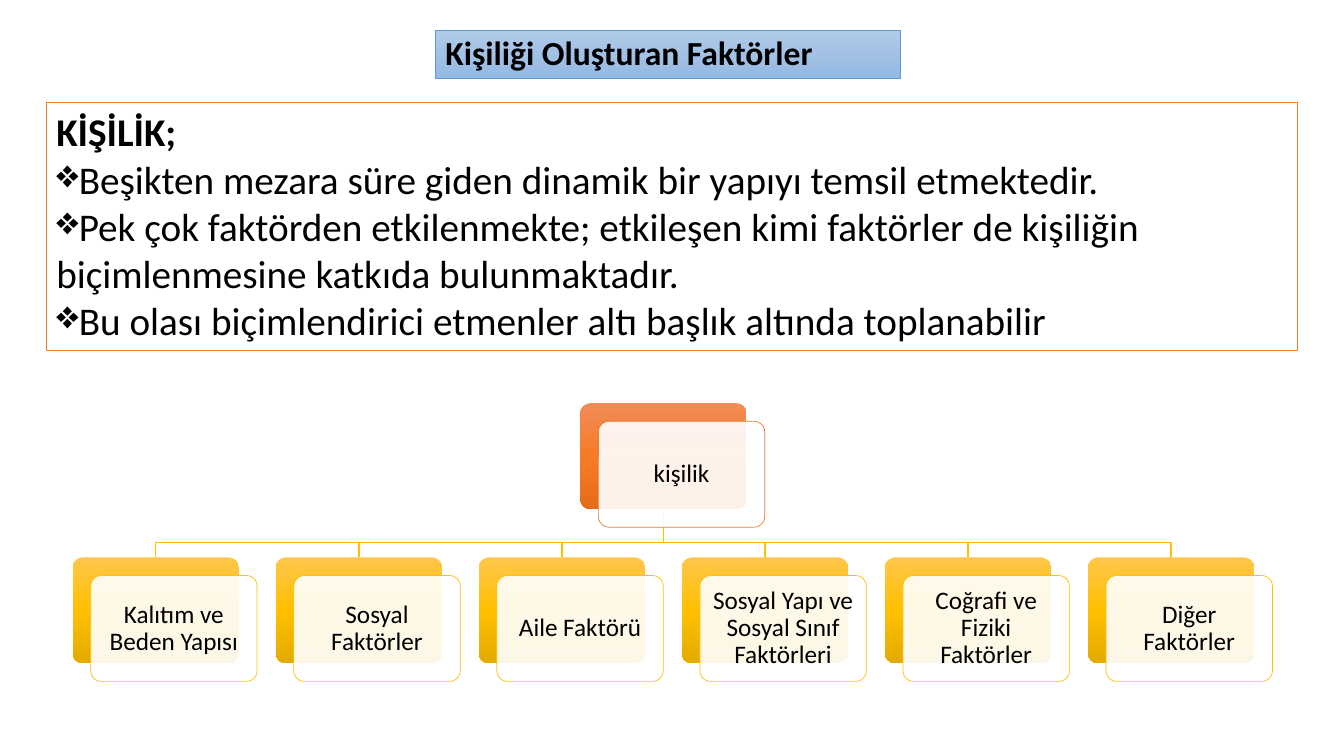
from copy import deepcopy

from lxml import etree
from pptx import Presentation
from pptx.dml.color import RGBColor
from pptx.enum.shapes import MSO_SHAPE
from pptx.enum.text import MSO_ANCHOR, PP_ALIGN
from pptx.oxml.ns import qn
from pptx.util import Inches, Pt

RECTANGLE, ROUNDED = MSO_SHAPE.RECTANGLE, MSO_SHAPE.ROUNDED_RECTANGLE
LEFT, CENTER = PP_ALIGN.LEFT, PP_ALIGN.CENTER
TOP, MIDDLE = MSO_ANCHOR.TOP, MSO_ANCHOR.MIDDLE

# Content
TITLE = "Kişiliği Oluşturan Faktörler"
HEADING = "KİŞİLİK;"
POINTS = [
    "Beşikten mezara süre giden dinamik bir yapıyı temsil etmektedir.",
    "Pek çok faktörden etkilenmekte; etkileşen kimi faktörler de kişiliğin "
    "biçimlenmesine katkıda bulunmaktadır.",
    "Bu olası biçimlendirici etmenler altı başlık altında toplanabilir",
]
ROOT = "kişilik"
FACTORS = [
    "Kalıtım ve Beden Yapısı",
    "Sosyal Faktörler",
    "Aile Faktörü",
    "Sosyal Yapı ve Sosyal Sınıf Faktörleri",
    "Coğrafi ve Fiziki Faktörler",
    "Diğer Faktörler",
]

# Style
FONT = "Calibri"
COLORS = {"text": "000000", "paper": "FFFFFF", "title": "5B9BD5",
          "root": "ED7D31", "factor": "FFC000"}
GRADIENTS = {"title": ("B1CBE9", "A3C1E5", "93B9E4"),
             "root": ("F18C57", "F67B28", "E56C19"),
             "factor": ("FFC64B", "FFC000", "E3AB00")}

# Tree layout, in inches
CARD_WIDTH, CARD_HEIGHT = 1.65, 1.05
CARD_SHIFT = 0.18
ROOT_TOP, FACTOR_TOP, BRANCH_Y = 4, 5.53, 5.38
FIRST_LEFT, LAST_LEFT = 0.72, 10.79
PITCH = (LAST_LEFT - FIRST_LEFT) / (len(FACTORS) - 1)
ROOT_LEFT = (FIRST_LEFT + LAST_LEFT) / 2

presentation = Presentation()
presentation.slide_width, presentation.slide_height = Inches(13.33), Inches(7.5)
slide = presentation.slides.add_slide(presentation.slide_layouts[6])


def color(name):
    return RGBColor.from_string(COLORS[name])


def add_box(kind, left, top, width, height, line=None, weight=0.5):
    shape = slide.shapes.add_shape(
        kind, Inches(left), Inches(top), Inches(width), Inches(height))
    shape.shadow.inherit = False
    if kind == ROUNDED:
        shape.adjustments[0] = 0.1
    if line:
        shape.line.color.rgb = color(line)
        shape.line.width = Pt(weight)
    else:
        shape.line.fill.background()
    return shape


def fill_gradient(shape, name):
    shape.fill.gradient()
    shape.fill.gradient_angle = 270
    stops = shape.element.spPr.find(qn("a:gradFill")).find(qn("a:gsLst"))
    stops.append(deepcopy(stops[0]))
    for index, stop in enumerate(shape.fill.gradient_stops):
        stop.position = index / 2
        stop.color.rgb = RGBColor.from_string(GRADIENTS[name][index])


def fill_paper(shape, opacity=100):
    shape.fill.solid()
    shape.fill.fore_color.rgb = color("paper")
    if opacity < 100:
        paper = shape.element.spPr.find(qn("a:solidFill"))[0]
        etree.SubElement(paper, qn("a:alpha"), val=str(opacity * 1000))


def write(paragraph, text, size, bold=False, align=LEFT, spacing=1.0, bullet=None):
    paragraph.text = text
    paragraph.alignment = align
    paragraph.line_spacing = spacing
    if bullet:
        properties = paragraph._p.get_or_add_pPr()
        etree.SubElement(properties, qn("a:buChar"), char=bullet)
    font = paragraph.font
    font.name, font.size, font.bold = FONT, Pt(size), bold
    font.color.rgb = color("text")


def add_card(text, left, top, name):
    back = add_box(ROUNDED, left, top, CARD_WIDTH, CARD_HEIGHT)
    fill_gradient(back, name)
    front = add_box(ROUNDED, left + CARD_SHIFT, top + CARD_SHIFT,
                    CARD_WIDTH, CARD_HEIGHT, name)
    fill_paper(front, 90)
    frame = front.text_frame
    frame.word_wrap = True
    frame.vertical_anchor = MIDDLE
    frame.margin_left = frame.margin_right = Inches(0.07)
    frame.margin_top = frame.margin_bottom = Inches(0.07)
    write(frame.paragraphs[0], text, 18, align=CENTER, spacing=0.9)


def add_branch(left):
    start_x, end_x = ROOT_LEFT + CARD_WIDTH / 2, left + CARD_WIDTH / 2
    points = [(start_x, BRANCH_Y), (end_x, BRANCH_Y), (end_x, FACTOR_TOP)]
    builder = slide.shapes.build_freeform(
        Inches(start_x), Inches(ROOT_TOP + CARD_HEIGHT))
    builder.add_line_segments([(Inches(x), Inches(y)) for x, y in points], close=False)
    branch = builder.convert_to_shape()
    branch.shadow.inherit = False
    branch.fill.background()
    branch.line.color.rgb = color("factor")
    branch.line.width = Pt(1)


# Title
title = add_box(RECTANGLE, 4.32, 0.3, 4.61, 0.48, "title")
fill_gradient(title, "title")
title.text_frame.word_wrap = True
title.text_frame.vertical_anchor = MIDDLE
write(title.text_frame.paragraphs[0], TITLE, 24, bold=True, spacing=0.9)

# Tree: branches behind the cards
factor_lefts = [FIRST_LEFT + index * PITCH for index in range(len(FACTORS))]
for factor_left in factor_lefts:
    add_branch(factor_left)
add_card(ROOT, ROOT_LEFT, ROOT_TOP, "root")
for factor, factor_left in zip(FACTORS, factor_lefts):
    add_card(factor, factor_left, FACTOR_TOP, "factor")

# Description
description = add_box(RECTANGLE, 0.46, 1.02, 12.41, 2.46, "root", 1)
fill_paper(description)
description.text_frame.word_wrap = True
description.text_frame.vertical_anchor = TOP
write(description.text_frame.paragraphs[0], HEADING, 28, bold=True)
for point in POINTS:
    write(description.text_frame.add_paragraph(), point, 28, bullet="❖")

presentation.save("out.pptx")
